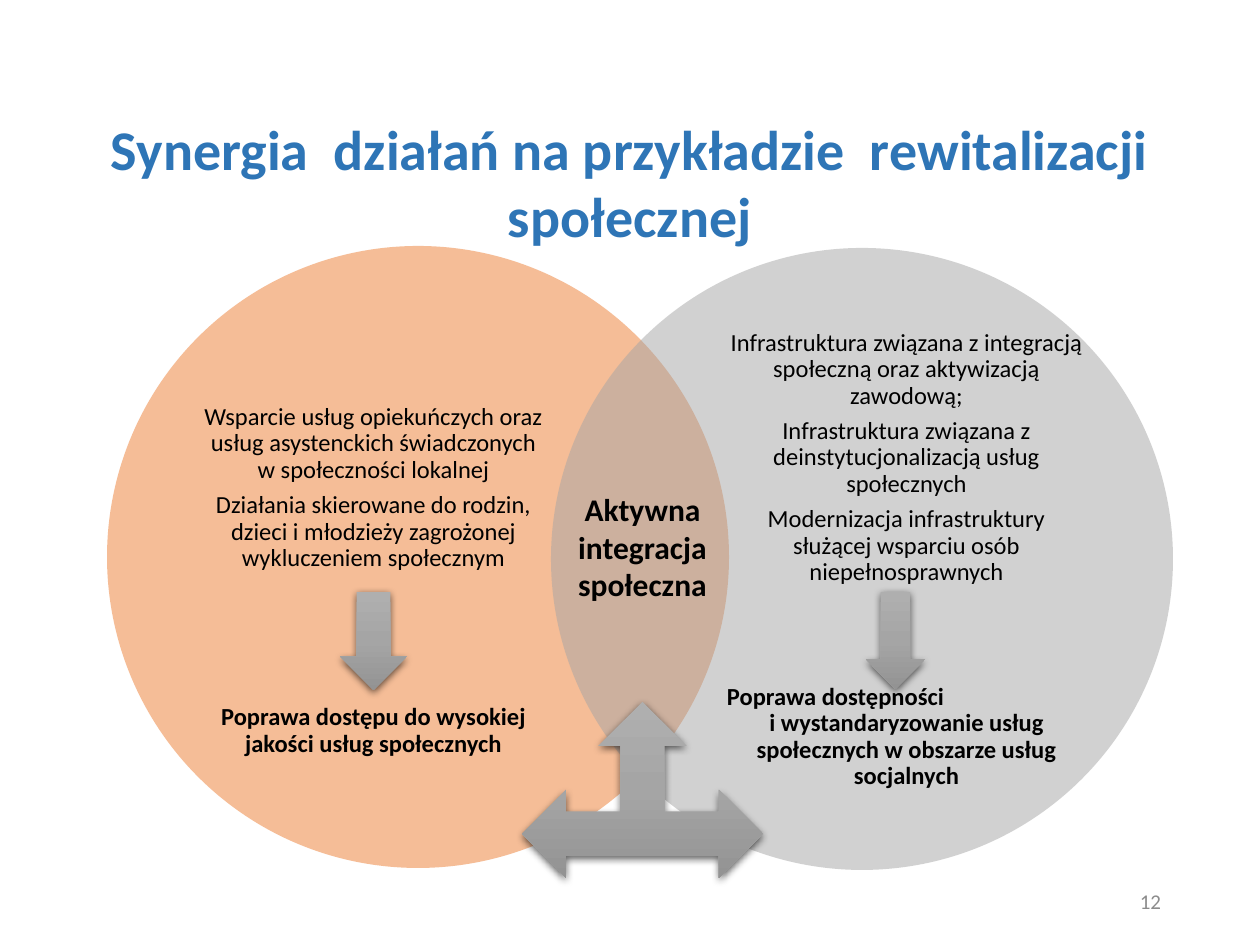
import copy
from dataclasses import dataclass

import pptx
import pptx.dml.color
import pptx.enum.shapes
import pptx.enum.text
import pptx.oxml
import pptx.oxml.ns
import pptx.util
from lxml import etree

SHAPE = pptx.enum.shapes.MSO_SHAPE
ALIGN = pptx.enum.text.PP_ALIGN
ANCHOR = pptx.enum.text.MSO_ANCHOR
qn = pptx.oxml.ns.qn


@dataclass(frozen=True)
class Theme:
    font: str = "Calibri"
    title: str = "2E75B6"
    text: str = "000000"
    muted: str = "8C8C8C"
    support: str = "ED7D31"
    infrastructure: str = "A5A5A5"
    arrow: tuple = ((0, "AFAFAF"), (0.5, "A5A5A5"), (1, "939393"))
    title_size: int = 32
    centre_size: int = 18
    body_size: int = 14
    number_size: int = 12


T = Theme()


def px(n):
    return pptx.util.Emu(round(n * 914400 / 126))


def rgb(c):
    return pptx.dml.color.RGBColor.from_string(c)


def add_text(s, box, paragraphs, size=T.body_size, color=T.text, bold=False,
             align=ALIGN.CENTER, spacing=1.0, after=0, inset=13):
    """Write one paragraph per item; a newline inside an item breaks the line."""
    tf = s.shapes.add_textbox(*map(px, box)).text_frame
    tf.word_wrap = True
    tf.vertical_anchor = ANCHOR.MIDDLE
    tf.margin_left = tf.margin_right = px(inset)
    tf.margin_top = tf.margin_bottom = px(inset / 2)
    for i, text in enumerate(paragraphs):
        p = tf.paragraphs[0] if i == 0 else tf.add_paragraph()
        p.alignment = align
        p.line_spacing = spacing
        p.space_after = pptx.util.Pt(after)
        for j, line in enumerate(text.split("\n")):
            if j:
                p.add_line_break()
            r = p.add_run()
            r.text = line
            r.font.name = T.font
            r.font.size = pptx.util.Pt(size)
            r.font.bold = bold
            r.font.color.rgb = rgb(color)
    return tf


def add_circle(s, box, color):
    sp = s.shapes.add_shape(SHAPE.OVAL, *map(px, box))
    sp.shadow.inherit = False
    sp.line.fill.background()
    sp.fill.solid()
    sp.fill.fore_color.rgb = rgb(color)
    clr = sp._element.spPr.find(qn("a:solidFill"))[0]
    etree.SubElement(clr, qn("a:alpha"), val="50000")


def add_arrow(s, kind, box):
    """Block arrow with a vertical gradient and a soft shadow."""
    sp = s.shapes.add_shape(kind, *map(px, box))
    sp.line.fill.background()
    sp.fill.gradient()
    sp.fill.gradient_angle = 270
    stops = sp._element.spPr.find(qn("a:gradFill")).find(qn("a:gsLst"))
    stops.append(copy.deepcopy(stops[0]))
    for stop, (position, color) in zip(sp.fill.gradient_stops, T.arrow):
        stop.position = position
        stop.color.rgb = rgb(color)
    sp.shadow.inherit = False
    effects = sp._element.spPr.find(qn("a:effectLst"))
    shadow = etree.SubElement(effects, qn("a:outerShdw"), blurRad="57150", dist="19050",
                              dir="5400000", algn="ctr", rotWithShape="0")
    clr = etree.SubElement(shadow, qn("a:srgbClr"), val="000000")
    etree.SubElement(clr, qn("a:alpha"), val="63000")


def add_circle_region(s, box, color, text_x, actions, actions_y, result, result_y):
    """Circle with its actions above and their result below; y values are (top, height)."""
    x, y, _, _ = box
    add_circle(s, box, color)
    for (top, height), paragraphs, bold, after in (
            (actions_y, actions, False, 5), (result_y, result, True, 0)):
        tf = add_text(s, (x + text_x, y + top, 359, height), paragraphs,
                      bold=bold, spacing=0.9, after=after, inset=0)
    return tf


def add_arrows(s, box):
    x, y, w, _ = box
    add_arrow(s, SHAPE.LEFT_RIGHT_UP_ARROW, (x + 182, y + 110, 241, 176))
    add_arrow(s, SHAPE.DOWN_ARROW, (x + w - 59, y, 59, 97))
    add_arrow(s, SHAPE.DOWN_ARROW, (x, y, 67, 98))


def main():
    prs = pptx.Presentation()
    prs.slide_width, prs.slide_height = px(1260), px(945)
    s = prs.slides.add_slide(prs.slide_layouts[6])

    # Page number and title
    add_text(s, (890, 876, 284, 50), ["12"], size=T.number_size, color=T.muted,
             align=ALIGN.RIGHT)
    add_text(s, (19, 126, 1222, 112),
             ["Synergia  działań na przykładzie  rewitalizacji społecznej"],
             size=T.title_size, color=T.title, bold=True)

    # Overlapping circles
    add_circle_region(
        s, (107, 246, 622, 622), T.support, 87,
        ["Wsparcie usług opiekuńczych oraz usług asystenckich świadczonych\n"
         "w społeczności lokalnej",
         "Działania skierowane do rodzin, dzieci i młodzieży zagrożonej "
         "wykluczeniem społecznym"], (158, 168),
        ["Poprawa dostępu do wysokiej jakości usług społecznych"], (458, 54))
    result = add_circle_region(
        s, (551, 248, 622, 622), T.infrastructure, 176,
        ["Infrastruktura związana z integracją społeczną oraz aktywizacją zawodową;",
         "Infrastruktura związana z deinstytucjonalizacją usług społecznych",
         "Modernizacja infrastruktury służącej wsparciu osób niepełnosprawnych"], (82, 256),
        ["Poprawa dostępności",
         "i wystandaryzowanie usług społecznych w obszarze usług socjalnych"], (436, 106))
    result.paragraphs[0].alignment = ALIGN.LEFT

    # Arrows and the shared core
    add_arrows(s, (340, 592, 585, 286))
    add_text(s, (551, 483, 183, 127), ["Aktywna", "integracja", "społeczna"],
             size=T.centre_size, bold=True)

    prs.save("out.pptx")


if __name__ == "__main__":
    main()
